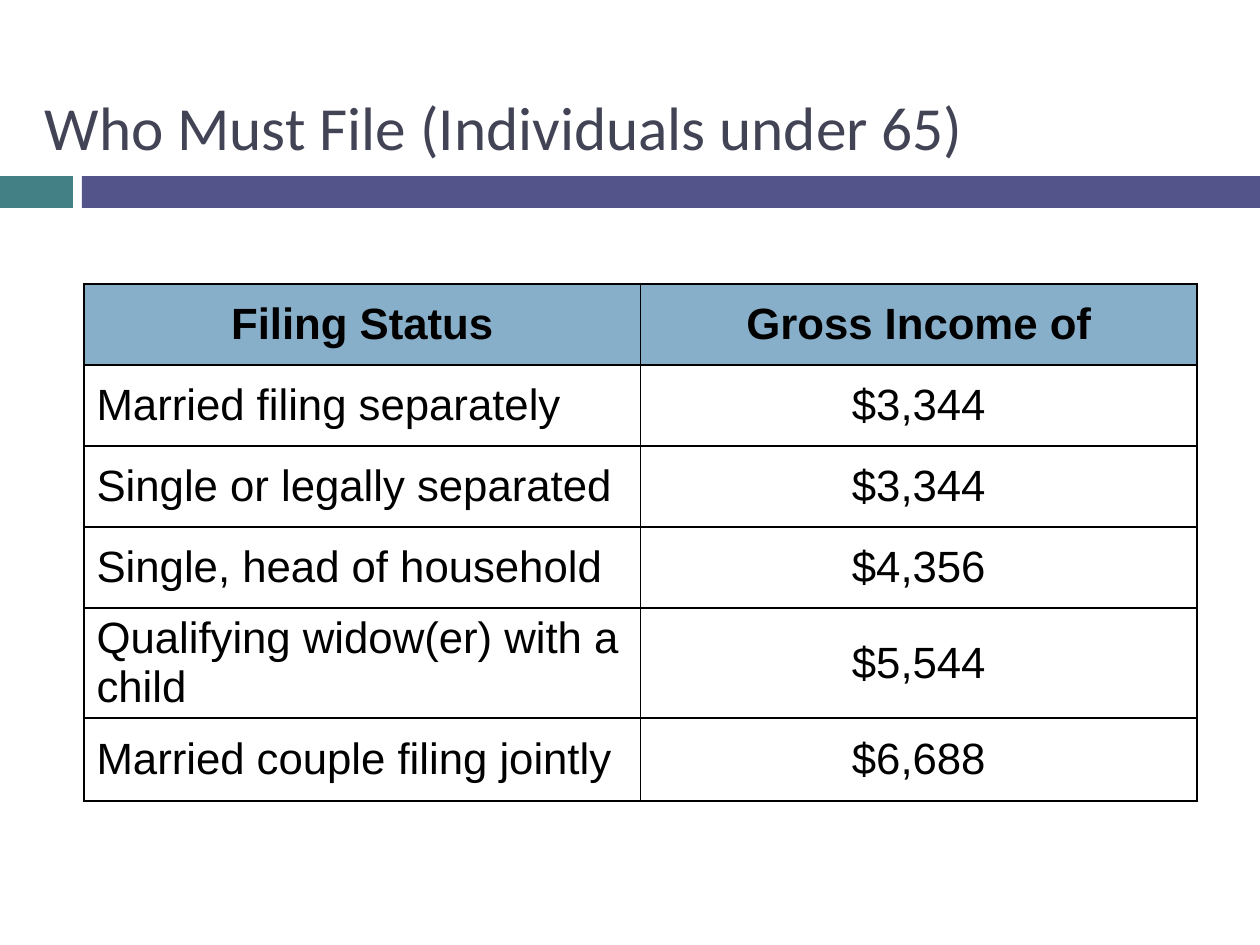
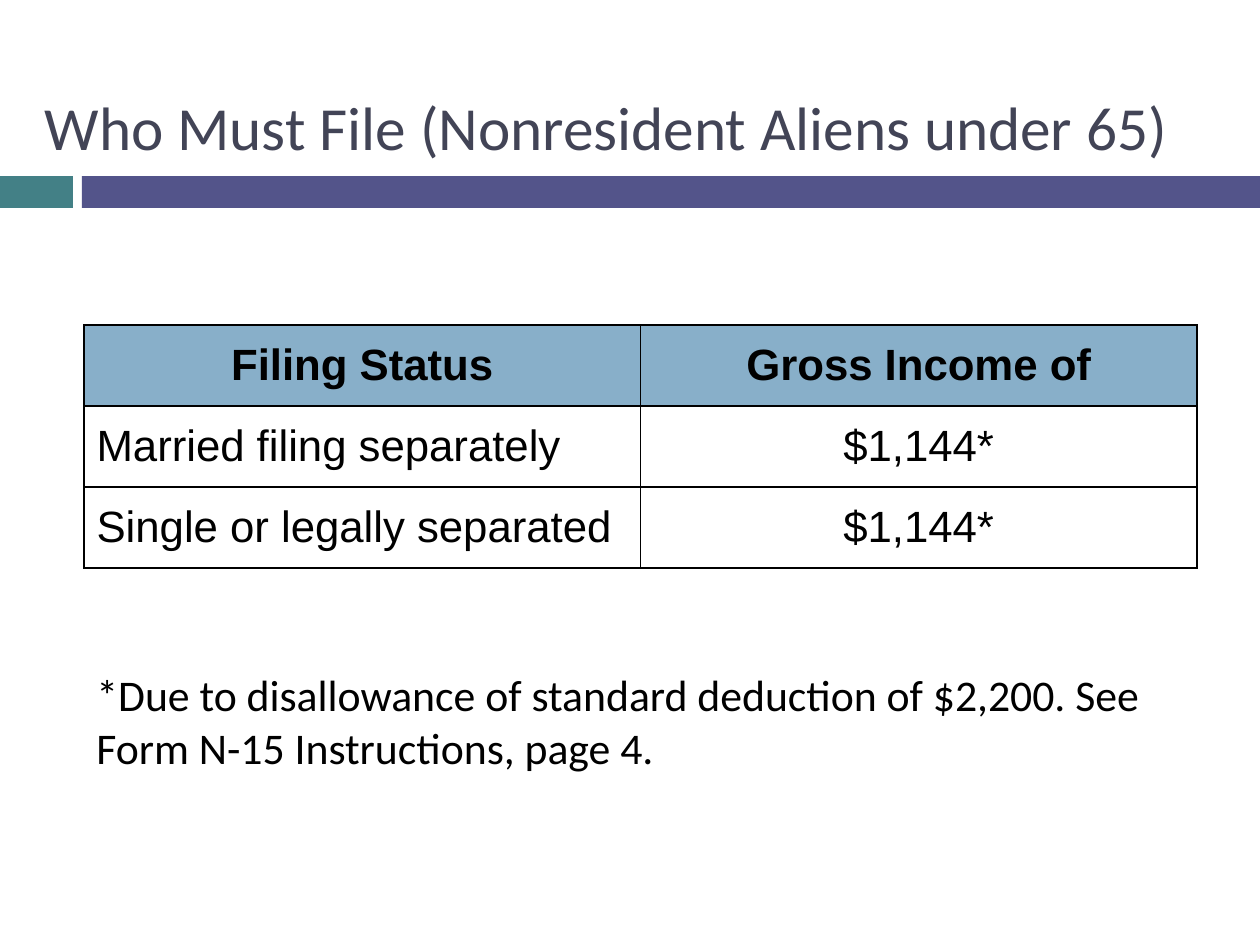
from lxml import etree
from pptx import Presentation
from pptx.dml.color import RGBColor
from pptx.enum.shapes import MSO_SHAPE
from pptx.enum.text import MSO_ANCHOR, MSO_AUTO_SIZE, PP_ALIGN
from pptx.oxml import parse_xml
from pptx.oxml.ns import qn
from pptx.util import Emu, Pt

RECT = MSO_SHAPE.RECTANGLE
LEFT, CENTER = PP_ALIGN.LEFT, PP_ALIGN.CENTER
TOP, MIDDLE, BOTTOM = MSO_ANCHOR.TOP, MSO_ANCHOR.MIDDLE, MSO_ANCHOR.BOTTOM
FIXED = MSO_AUTO_SIZE.NONE
PX = 914400 / 126
DML = "http://schemas.openxmlformats.org/drawingml/2006/main"

TEAL, VIOLET, BLUE = "438086", "53548A", "5C92B5"
SLATE, BLACK = "424456", "000000"
BANDS = [(0, 73, TEAL), (82, 1178, VIOLET)]
EDGE = 84
WIDTH = 1113
HEAD = ("Filing Status", "Gross Income of")
NOTE = ("*Due to disallowance of standard deduction of $2,200. "
        "See Form N-15 Instructions, page 4.")

# title, table top, row heights, body rows, note
PAGES = [
    ("Who Must File (Individuals under 65)", 284, [81, 81, 81, 81, 74, 83], [
        ("Married filing separately", "$3,344"),
        ("Single or legally separated", "$3,344"),
        ("Single, head of household", "$4,356"),
        ("Qualifying widow(er) with a child", "$5,544"),
        ("Married couple filing jointly", "$6,688"),
    ], None),
    ("Who Must File (Nonresident Aliens under 65)", 325, [81, 81, 81], [
        ("Married filing separately", "$1,144*"),
        ("Single or legally separated", "$1,144*"),
    ], NOTE),
]


def px(*sizes):
    """Turn pixel lengths into a list of EMU."""
    return [Emu(round(size * PX)) for size in sizes]


def write(frame, text, size=25, font="Calibri", color=BLACK, bold=False,
          align=LEFT, anchor=TOP):
    frame.word_wrap = True
    frame.vertical_anchor = anchor
    para = frame.paragraphs[0]
    para.alignment = align
    run = para.add_run()
    run.text = text
    run.font.size = Pt(size)
    run.font.name = font
    run.font.bold = bold
    run.font.color.rgb = RGBColor.from_string(color)


deck = Presentation()
deck.slide_width, deck.slide_height = px(1260, 945)

for title, top, heights, body, note in PAGES:
    slide = deck.slides.add_slide(deck.slide_layouts[5])

    for left, width, color in BANDS:
        band = slide.shapes.add_shape(RECT, *px(left, 176, width, 32))
        band.shadow.inherit = False
        band.fill.solid()
        band.fill.fore_color.rgb = RGBColor.from_string(color)
        band.line.fill.background()

    head = slide.shapes.title
    head.left, head.top, head.width, head.height = px(32, 53, 1207, 116)
    head.text_frame.auto_size = FIXED
    write(head.text_frame, title, size=35, color=SLATE, anchor=BOTTOM)

    rows = [HEAD] + body
    box = px(EDGE, top, WIDTH, sum(heights))
    table = slide.shapes.add_table(len(rows), 2, *box).table
    table.first_row = table.horz_banding = False
    for col in table.columns:
        col.width = px(WIDTH / 2)[0]
    for r, (row, height) in enumerate(zip(rows, heights)):
        table.rows[r].height = px(height)[0]
        for c, text in enumerate(row):
            cell = table.cell(r, c)
            first = r == 0
            write(cell.text_frame, text, font="Arial", bold=first,
                  align=CENTER if first or c else LEFT)
            cell.vertical_anchor = MIDDLE
            props = cell._tc.get_or_add_tcPr()
            for side in "LRTB":
                props.append(parse_xml(
                    f'<a:ln{side} xmlns:a="{DML}" w="{Pt(1)}"><a:solidFill>'
                    f'<a:srgbClr val="{BLACK}"/></a:solidFill></a:ln{side}>'))
            if first:
                cell.fill.solid()
                cell.fill.fore_color.rgb = RGBColor.from_string(BLUE)
                tint = props.find(qn("a:solidFill")).find(qn("a:srgbClr"))
                etree.SubElement(tint, qn("a:alpha"), val="73000")
            else:
                cell.fill.background()

    if note:
        foot = slide.shapes.add_textbox(*px(EDGE, 662, WIDTH, 118))
        write(foot.text_frame, note)

deck.save("out.pptx")
